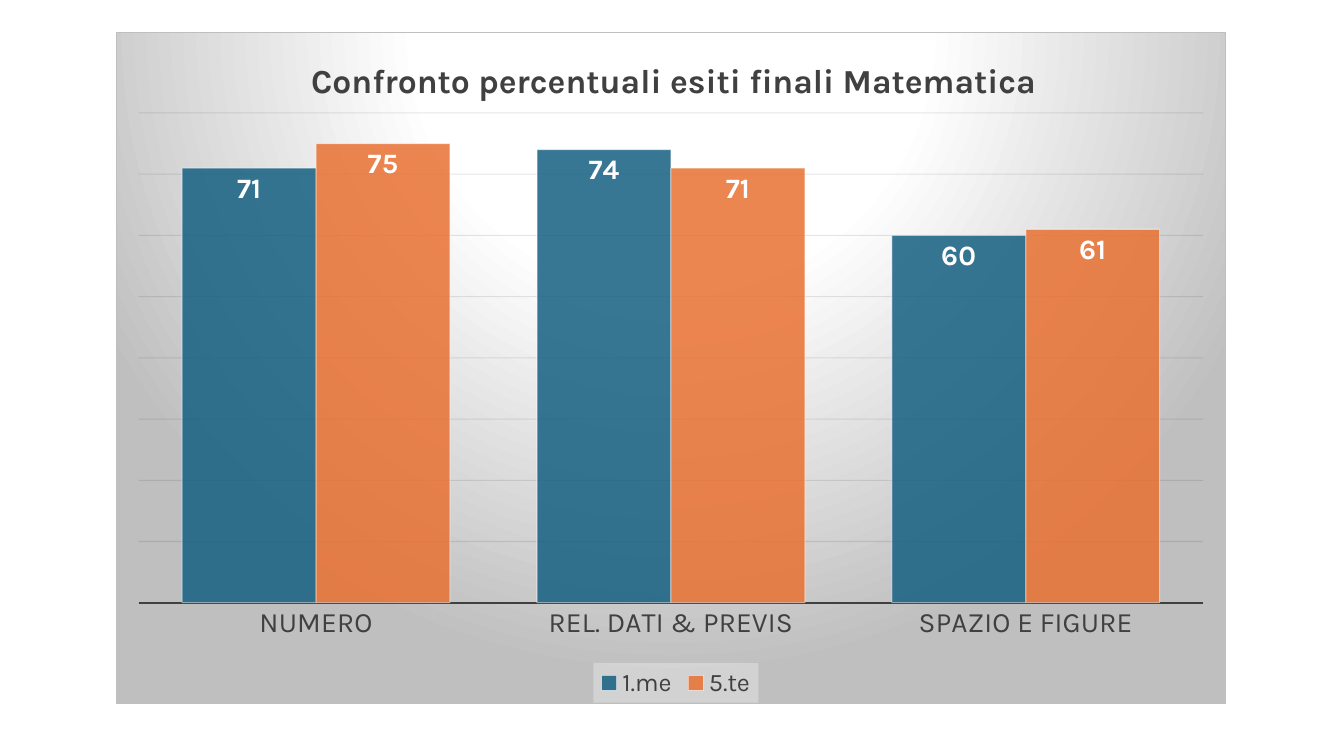
from dataclasses import dataclass

from lxml import etree
from pptx import Presentation
from pptx.chart.data import CategoryChartData
from pptx.dml.color import RGBColor
from pptx.enum.chart import (XL_CHART_TYPE, XL_LABEL_POSITION,
                             XL_LEGEND_POSITION, XL_TICK_MARK)
from pptx.oxml import parse_xml
from pptx.oxml.ns import qn
from pptx.util import Emu, Pt

COLUMNS = XL_CHART_TYPE.COLUMN_CLUSTERED
INSIDE_END = XL_LABEL_POSITION.INSIDE_END
BOTTOM = XL_LEGEND_POSITION.BOTTOM
NO_TICK = XL_TICK_MARK.NONE

PX = 914400 / 100.8
PAGE_SIZE = (1344, 756)
CHART_BOX = (116, 32, 1110, 672)

TITLE = "Confronto percentuali esiti finali Matematica"
CATEGORIES = ("NUMERO", "REL. DATI & PREVIS", "SPAZIO E FIGURE")
RESULTS = {"1.me": (71, 74, 60), "5.te": (75, 71, 61)}

NAMESPACES = ('xmlns:c="http://schemas.openxmlformats.org/drawingml/2006/chart" '
              'xmlns:a="http://schemas.openxmlformats.org/drawingml/2006/main"')


@dataclass(frozen=True)
class Theme:
    font: str = "Karla"
    text: str = "404040"
    white: str = "FFFFFF"
    grey: str = "BFBFBF"
    grid: str = "0D0D0D"
    legend_fill: str = "F2F2F2"
    bars: tuple = ("156082", "E97132")
    title_size: int = 24
    label_size: int = 20
    legend_size: int = 18


THEME = Theme()


def px(length):
    return Emu(round(length * PX))


def style_font(font, size, color, bold=False):
    font.name = THEME.font
    font.size = Pt(size)
    font.bold = bold
    font.color.rgb = RGBColor.from_string(color)


def paint(fill, color, opacity=100):
    """Fill with one colour at an opacity in percent."""
    fill.solid()
    fill.fore_color.rgb = RGBColor.from_string(color)
    if opacity < 100:
        solid = fill._xPr.find(qn("a:solidFill"))
        alpha = etree.SubElement(solid[0], qn("a:alpha"))
        alpha.set("val", str(opacity * 1000))


def style_line(line, color, width, opacity=100):
    line.width = Pt(width)
    paint(line.fill, color, opacity)


def set_layout(parent, previous, **fractions):
    """Place a chart part by fractions of the chart, after a sibling if given."""
    for old in parent.findall(qn("c:layout")):
        parent.remove(old)
    inner = '<c:layoutTarget val="inner"/>' if "h" in fractions else ""
    modes = '<c:xMode val="edge"/><c:yMode val="edge"/>'
    values = "".join(f'<c:{key} val="{value}"/>' for key, value in fractions.items())
    layout = parse_xml(f"<c:layout {NAMESPACES}><c:manualLayout>{inner}{modes}"
                       f"{values}</c:manualLayout></c:layout>")
    if previous is None:
        parent.insert(0, layout)
    else:
        previous.addnext(layout)


def style_background(chart):
    stops = "".join(
        f'<a:gs pos="{position * 1000}"><a:srgbClr val="{color}"/></a:gs>'
        for position, color in ((0, THEME.white), (39, THEME.white), (100, THEME.grey)))
    chart._chartSpace.find(qn("c:chart")).addnext(parse_xml(
        f'<c:spPr {NAMESPACES}><a:gradFill><a:gsLst>{stops}</a:gsLst>'
        '<a:path path="circle"><a:fillToRect l="50000" t="-80000" r="50000" b="180000"/>'
        f'</a:path></a:gradFill><a:ln w="{Pt(0.75)}"><a:solidFill>'
        f'<a:srgbClr val="{THEME.grey}"/></a:solidFill></a:ln></c:spPr>'))


def style_title(chart):
    chart.has_title = True
    frame = chart.chart_title.text_frame
    frame.text = TITLE
    style_font(frame.paragraphs[0].runs[0].font, THEME.title_size, THEME.text, True)
    chart.chart_title.include_in_layout = False
    title = chart.chart_title._element
    set_layout(title, title.find(qn("c:tx")), x=0.17, y=0.03)


def style_axes(chart):
    category = chart.category_axis
    category.major_tick_mark = category.minor_tick_mark = NO_TICK
    style_font(category.tick_labels.font, THEME.label_size, THEME.text)
    style_line(category.format.line, THEME.text, 1.5)

    value = chart.value_axis
    value.minimum_scale, value.maximum_scale, value.major_unit = 0, 80, 10
    value.has_major_gridlines = True
    style_line(value.major_gridlines.format.line, THEME.grid, 0.75, 10)
    value.visible = False


def style_bars(chart):
    plot = chart.plots[0]
    plot.gap_width = 65
    plot.overlap = 0
    plot.vary_by_categories = False
    for series, color in zip(plot.series, THEME.bars):
        paint(series.format.fill, color, 85)
        style_line(series.format.line, THEME.white, 0.75, 50)
        labels = series.data_labels
        labels.show_value = True
        labels.position = INSIDE_END
        labels.number_format = "0"
        labels.number_format_is_linked = False
        style_font(labels.font, THEME.label_size, THEME.white, True)


def style_legend(chart):
    chart.has_legend = True
    legend = chart.legend
    legend.position = BOTTOM
    legend.include_in_layout = False
    style_font(legend.font, THEME.legend_size, THEME.text)
    element = legend._element
    element.find(qn("c:overlay")).addnext(parse_xml(
        f'<c:spPr {NAMESPACES}><a:solidFill><a:srgbClr val="{THEME.legend_fill}">'
        '<a:alpha val="39000"/></a:srgbClr></a:solidFill></c:spPr>'))
    set_layout(element, element.find(qn("c:legendPos")), x=0.43, y=0.94)


def add_results_chart(page, box):
    data = CategoryChartData(number_format="0")
    data.categories = CATEGORIES
    for name, values in RESULTS.items():
        data.add_series(name, values)
    chart = page.shapes.add_chart(COLUMNS, *map(px, box), data).chart
    style_font(chart.font, 10, "000000")
    style_background(chart)
    style_title(chart)
    style_axes(chart)
    style_bars(chart)
    style_legend(chart)
    plot_area = chart._chartSpace.find(qn("c:chart")).find(qn("c:plotArea"))
    set_layout(plot_area, None, x=0.02, y=0.12, w=0.96, h=0.73)


def main():
    deck = Presentation()
    deck.slide_width, deck.slide_height = map(px, PAGE_SIZE)
    page = deck.slides.add_slide(deck.slide_layouts[6])
    paint(page.background.fill, THEME.white)
    add_results_chart(page, CHART_BOX)
    deck.save("out.pptx")


if __name__ == "__main__":
    main()
